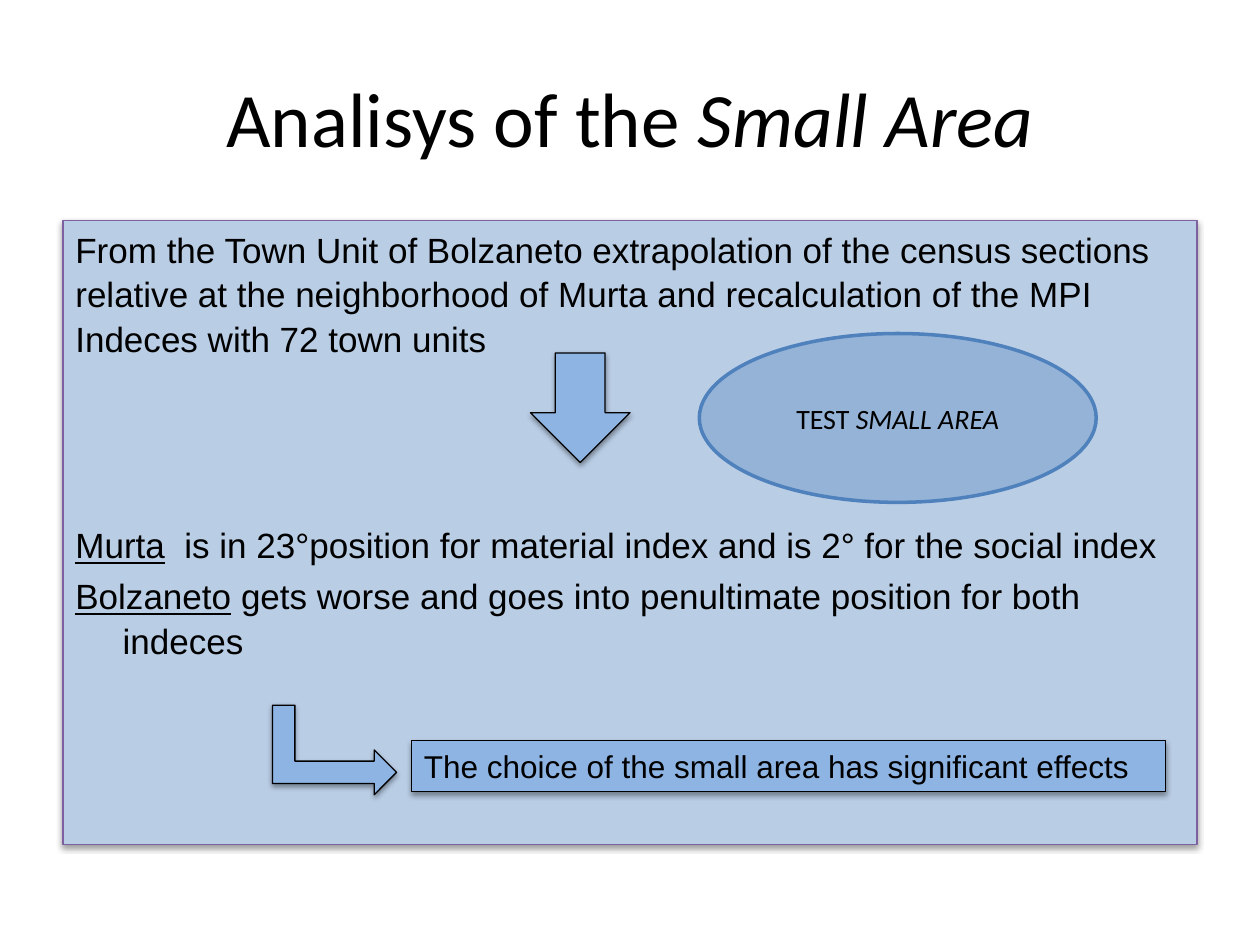
from dataclasses import dataclass

from lxml import etree
from pptx import Presentation
from pptx.dml.color import RGBColor
from pptx.enum.shapes import MSO_SHAPE
from pptx.enum.text import MSO_ANCHOR, PP_ALIGN
from pptx.oxml import parse_xml
from pptx.util import Pt

RECTANGLE = MSO_SHAPE.RECTANGLE
DOWN_ARROW = MSO_SHAPE.DOWN_ARROW
ELLIPSE = MSO_SHAPE.OVAL
BENT_ARROW = MSO_SHAPE.BENT_UP_ARROW
TOP, MIDDLE = MSO_ANCHOR.TOP, MSO_ANCHOR.MIDDLE
LEFT, CENTER = PP_ALIGN.LEFT, PP_ALIGN.CENTER

BLACK = "000000"
ARROW_BLUE = "8EB4E3"
SHADOW = (
    '<a:effectLst xmlns:a="http://schemas.openxmlformats.org/drawingml/2006/main">'
    '<a:outerShdw blurRad="40000" dist="20000" dir="5400000" rotWithShape="0">'
    '<a:srgbClr val="000000"><a:alpha val="38000"/></a:srgbClr>'
    "</a:outerShdw></a:effectLst>"
)


@dataclass(frozen=True)
class Span:
    text: str
    italic: bool = False
    underline: bool = False


@dataclass(frozen=True)
class Line:
    spans: tuple[Span, ...]
    size: float
    font: str = "Arial"
    align: PP_ALIGN = LEFT
    before: float = 0
    spacing: float = 1
    hanging: float = 0


@dataclass(frozen=True)
class Block:
    kind: MSO_SHAPE
    box: tuple[float, float, float, float]
    fill: str
    outline: str = BLACK
    weight: float = 0.75
    shadow: bool = True
    rotation: float = 0
    anchor: MSO_ANCHOR = TOP
    lines: tuple[Line, ...] = ()


def color(value: str) -> RGBColor:
    return RGBColor.from_string(value)


def write(frame, lines: tuple[Line, ...], anchor: MSO_ANCHOR) -> None:
    frame.word_wrap = True
    frame.vertical_anchor = anchor
    for index, line in enumerate(lines):
        paragraph = frame.add_paragraph() if index else frame.paragraphs[0]
        paragraph.alignment = line.align
        paragraph.space_before = Pt(line.before)
        paragraph.line_spacing = line.spacing
        paragraph.font.name = line.font
        paragraph.font.size = Pt(line.size)
        paragraph.font.color.rgb = color(BLACK)
        if line.hanging:
            properties = paragraph._p.get_or_add_pPr()
            properties.set("marL", str(Pt(line.hanging)))
            properties.set("indent", str(-Pt(line.hanging)))
        for span in line.spans:
            run = paragraph.add_run()
            run.text = span.text
            if span.italic:
                run.font.italic = True
            if span.underline:
                run.font.underline = True


def draw(slide, block: Block) -> None:
    shape = slide.shapes.add_shape(block.kind, *map(Pt, block.box))
    shape.rotation = block.rotation
    shape.fill.solid()
    shape.fill.fore_color.rgb = color(block.fill)
    shape.line.color.rgb = color(block.outline)
    shape.line.width = Pt(block.weight)
    shape.shadow.inherit = False
    if block.shadow:
        properties = shape._element.spPr
        empty_effects = properties.find("{*}effectLst")
        properties.replace(empty_effects, parse_xml(SHADOW))
    if block.lines:
        write(shape.text_frame, block.lines, block.anchor)


TITLE = Line((Span("Analisys of the "), Span("Small Area", italic=True)), 44, "Calibri", CENTER)

FINDINGS = (
    Line((Span("From the Town Unit of Bolzaneto extrapolation of the census sections "
               "relative at the neighborhood of Murta and recalculation of the MPI "
               "Indeces with 72 town units"),), 20, spacing=1.05),
    Line((Span("Murta", underline=True),
          Span("  is in 23°position for material index and is 2° for the social index")),
         20, before=93, spacing=1.05, hanging=27),
    Line((Span("Bolzaneto", underline=True),
          Span(" gets worse and goes into penultimate position for both indeces")),
         20, before=4, spacing=1.05, hanging=27),
)

TEST_LABEL = Line((Span("TEST "), Span("SMALL AREA", italic=True)), 16, "Calibri", CENTER)
CONCLUSION = Line((Span("The choice of the small area has significant effects"),), 18)

BLOCKS = (
    Block(RECTANGLE, (36, 126, 648, 356.4), "B9CDE5", "7D60A0", lines=FINDINGS),
    Block(DOWN_ARROW, (303.1, 201.7, 56.9, 62.6), ARROW_BLUE),
    Block(ELLIPSE, (399.6, 190.6, 226.8, 96.5), "95B3D7", "4F81BD", 2,
          shadow=False, anchor=MIDDLE, lines=(TEST_LABEL,)),
    Block(BENT_ARROW, (165.6, 393.1, 51.1, 70.9), ARROW_BLUE, rotation=90),
    Block(RECTANGLE, (235.2, 423.2, 430.8, 29.1), ARROW_BLUE, lines=(CONCLUSION,)),
)


def main() -> None:
    deck = Presentation()
    deck.slide_width, deck.slide_height = Pt(720), Pt(540)
    slide = deck.slides.add_slide(deck.slide_layouts[6])
    heading = slide.shapes.add_textbox(Pt(36), Pt(21.6), Pt(648), Pt(90))
    write(heading.text_frame, (TITLE,), MIDDLE)
    for block in BLOCKS:
        draw(slide, block)
    deck.save("out.pptx")


if __name__ == "__main__":
    main()
